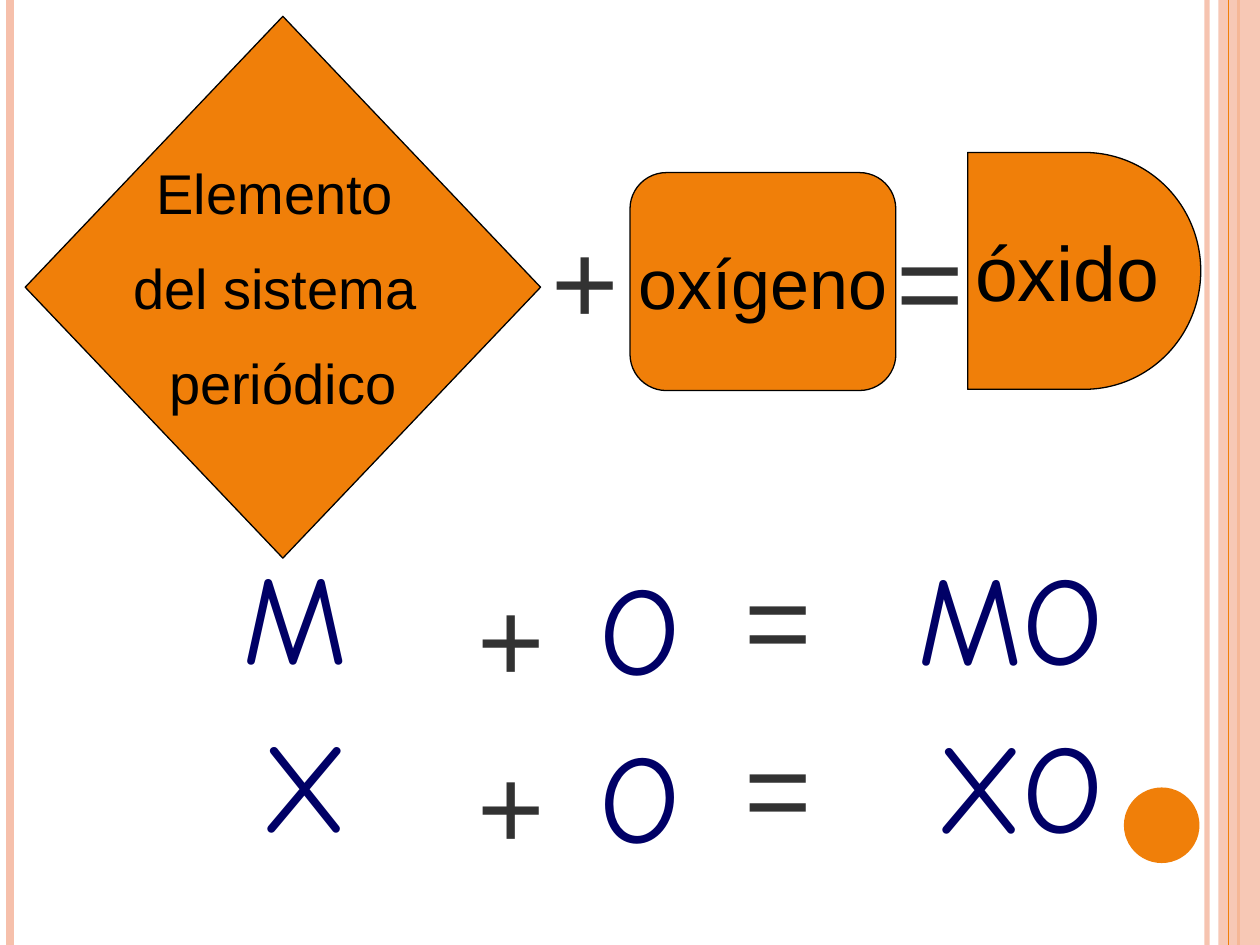
from lxml import etree
from pptx import Presentation
from pptx.dml.color import RGBColor
from pptx.enum.shapes import MSO_CONNECTOR, MSO_SHAPE
from pptx.enum.text import MSO_ANCHOR, MSO_AUTO_SIZE, PP_ALIGN
from pptx.oxml.ns import qn
from pptx.util import Inches, Pt

STRAIGHT = MSO_CONNECTOR.STRAIGHT
RECTANGLE, OVAL = MSO_SHAPE.RECTANGLE, MSO_SHAPE.OVAL
DIAMOND = MSO_SHAPE.FLOWCHART_DECISION
ROUNDED = MSO_SHAPE.FLOWCHART_ALTERNATE_PROCESS
DELAY = MSO_SHAPE.FLOWCHART_DELAY
TOP, MIDDLE = MSO_ANCHOR.TOP, MSO_ANCHOR.MIDDLE
CENTER, RIGHT = PP_ALIGN.CENTER, PP_ALIGN.RIGHT
GROW = MSO_AUTO_SIZE.SHAPE_TO_FIT_TEXT

COLUMNS, ROWS = 10, 7.5  # grid of one-inch cells
ORANGE, PEACH = "F07F09", "F6C0AB"
BLACK, GREY, NAVY = "000000", "323232", "000066"


def color(hex_string):
    return RGBColor.from_string(hex_string)


def set_opacity(fill, percent):
    """Make the solid color inside a fill or line element translucent."""
    rgb = next(fill.iter(qn("a:srgbClr")))
    etree.SubElement(rgb, qn("a:alpha")).set("val", str(percent * 1000))


class SlideBuilder:
    body_font, symbol_font = "Arial", "Comic Neue"
    operator_size, symbol_size = 66, 72
    space_before = 50  # percent of a line

    def __init__(self, presentation):
        self.slide = presentation.slides.add_slide(presentation.slide_layouts[6])
        self.shapes = self.slide.shapes

    def grid(self, *cells):
        return [Inches(cell) for cell in cells]

    def rule(self, column, hex_string, width, opacity=100):
        """Full-height vertical line."""
        line = self.shapes.add_connector(
            STRAIGHT, *self.grid(column, 0, column, ROWS))
        line.line.color.rgb = color(hex_string)
        line.line.width = Pt(width)
        properties = line._element.spPr
        etree.SubElement(properties, qn("a:effectLst"))
        if opacity < 100:
            set_opacity(properties, opacity)

    def block(self, kind, box, fill, outline=None, opacity=100):
        block = self.shapes.add_shape(kind, *self.grid(*box))
        block.shadow.inherit = False
        block.fill.solid()
        block.fill.fore_color.rgb = color(fill)
        if opacity < 100:
            set_opacity(block._element.spPr, opacity)
        if outline:
            block.line.color.rgb = color(outline)
            block.line.width = Pt(0.75)
        else:
            block.line.fill.background()
        return block

    def set_text(self, frame, text, size, font, hex_string, align, anchor, wrap):
        frame.text = text
        frame.word_wrap = wrap
        frame.vertical_anchor = anchor
        for paragraph in frame.paragraphs:
            paragraph.alignment = align
            paragraph.font.size = Pt(size)
            paragraph.font.name = font
            paragraph.font.color.rgb = color(hex_string)
            # Relative spacing has no public setter
            paragraph.space_before = Pt(0)
            spacing = paragraph._p.pPr.find(qn("a:spcBef"))
            spacing.remove(spacing[0])
            etree.SubElement(spacing, qn("a:spcPct")).set(
                "val", str(self.space_before * 1000))

    def concept(self, kind, box, text, size):
        block = self.block(kind, box, ORANGE, BLACK)
        self.set_text(block.text_frame, text, size, self.body_font, BLACK,
                      CENTER, MIDDLE, False)

    def label(self, box, text, *style):
        frame = self.shapes.add_textbox(*self.grid(*box)).text_frame
        self.set_text(frame, text, *style)
        frame.auto_size = GROW

    def operator(self, left, top, sign):
        self.label((left, top, 0.87, 1.2), sign, self.operator_size,
                   self.body_font, GREY, RIGHT, TOP, True)

    def symbol(self, right, top, width, text):
        self.label((right - width, top, width, 1.31), text, self.symbol_size,
                   self.symbol_font, NAVY, RIGHT, MIDDLE, False)

    def equation(self, top, element, width):
        """Element + O = oxide; the oxide is one letter wider."""
        self.symbol(8.86, top + 0.01, width + 0.81, element + "O")
        self.symbol(2.86, top, width, element)
        self.symbol(5.83, top + 0.09, 1.31, "O ")
        self.operator(3.55, top + 0.23, "+")
        self.operator(5.67, top + 0.08, "=")


def main():
    presentation = Presentation()
    presentation.slide_width = Inches(COLUMNS)
    presentation.slide_height = Inches(ROWS)
    builder = SlideBuilder(presentation)

    # Side decoration
    builder.rule(9.58, PEACH, 3, opacity=93)
    builder.rule(0.08, PEACH, 4.5)
    builder.rule(9.83, ORANGE, 1.5)
    builder.block(RECTANGLE, (9.67, 0, 0.33, ROWS), PEACH, opacity=87)
    builder.rule(9.75, ORANGE, 0.75)
    builder.block(OVAL, (8.92, 6.25, 0.6, 0.6), ORANGE)

    # Equation in words
    builder.concept(DIAMOND, (0.2, 0.13, 4.09, 4.3),
                    "Elemento \ndel sistema \nperiódico", 32)
    builder.concept(ROUNDED, (5, 1.37, 2.11, 1.73), "oxígeno", 40)
    builder.concept(DELAY, (7.68, 1.21, 1.85, 1.88), "óxido", 44)
    builder.operator(4.14, 1.61, "+")
    builder.operator(6.88, 1.61, "=")

    # Equations in symbols
    for row, (element, width) in enumerate((("M", 1.09), ("X", 0.93))):
        builder.equation(4.22 + 1.33 * row, element, width)

    presentation.save("out.pptx")


if __name__ == "__main__":
    main()
